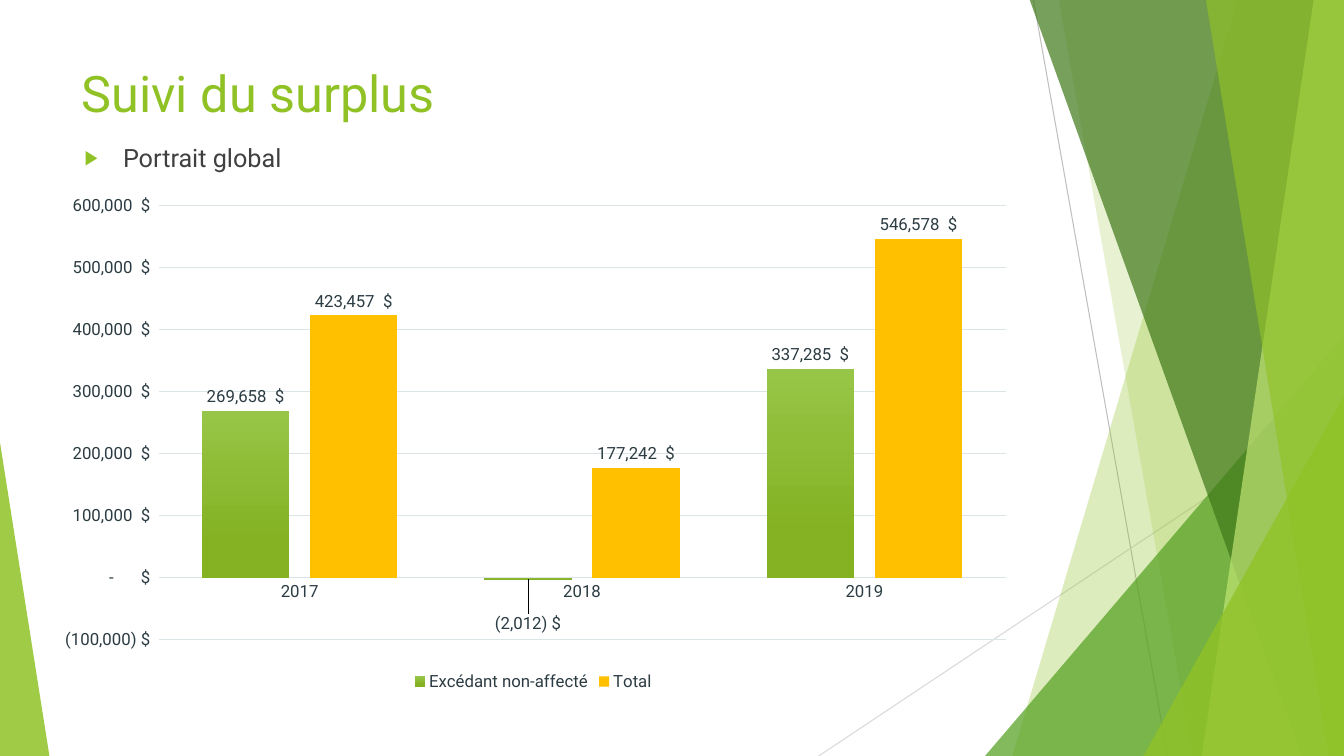
from dataclasses import dataclass

from lxml.etree import Element, SubElement
from pptx import Presentation
from pptx.chart.data import CategoryChartData
from pptx.dml.color import RGBColor as RGB
from pptx.enum.chart import XL_CHART_TYPE as ChartType
from pptx.enum.chart import XL_LABEL_POSITION as LabelPos
from pptx.enum.chart import XL_LEGEND_POSITION as LegendPos
from pptx.enum.chart import XL_TICK_MARK as TickMark
from pptx.enum.shapes import MSO_CONNECTOR as Connector
from pptx.enum.shapes import MSO_SHAPE as Shape
from pptx.enum.text import MSO_ANCHOR as Anchor
from pptx.enum.text import MSO_AUTO_SIZE as AutoSize
from pptx.enum.text import PP_ALIGN as Align
from pptx.oxml.ns import qn
from pptx.util import Inches, Pt


@dataclass(frozen=True)
class Theme:
    font: str = "Roboto"
    green: str = "90C226"
    leaf: str = "54A021"
    forest: str = "3F7819"
    lime: str = "C0E474"
    gold: str = "FFC000"
    bar_light: str = "97C547"
    bar_dark: str = "84B223"
    body: str = "404040"
    label: str = "2C3C43"
    grid: str = "DBE4E7"
    ray: str = "BFBFBF"
    pale_ray: str = "D9D9D9"
    title_size: int = 36
    body_size: int = 18
    label_size: int = 12
    hairline: float = 0.75


def assign(target, values):
    for name, value in values.items():
        setattr(target, name, value)


def box(left, top, width, height):
    return {"left": Inches(left), "top": Inches(top),
            "width": Inches(width), "height": Inches(height)}


class SlideBuilder:
    def __init__(self, slide, theme):
        self.slide = slide
        self.shapes = slide.shapes
        self.theme = theme

    def style_font(self, font, size, color):
        assign(font, {"name": self.theme.font, "size": Pt(size), "bold": False})
        font.color.rgb = RGB.from_string(color)

    def style_line(self, line, color):
        line.color.rgb = RGB.from_string(color)
        line.width = Pt(self.theme.hairline)

    def ray(self, start, end, color):
        ray = self.shapes.add_connector(Connector.STRAIGHT, *map(Inches, start + end))
        self.style_line(ray.line, color)
        SubElement(ray.element.spPr, qn("a:effectLst"))

    def tint(self, facet, color, opacity):
        facet.shadow.inherit = False
        facet.fill.solid()
        facet.fill.fore_color.rgb = RGB.from_string(color)
        facet.line.fill.background()
        solid = facet.element.spPr.find(qn("a:solidFill"))
        SubElement(solid[0], qn("a:alpha"), val=str(opacity * 1000))

    def band(self, top_left, bottom_left, color, opacity):
        top, right, bottom = -0.01, 13.33, 7.5
        outline = self.shapes.build_freeform(Inches(top_left), Inches(top))
        corners = [(right, top), (right, bottom), (bottom_left, bottom)]
        outline.add_line_segments([(Inches(x), Inches(y)) for x, y in corners])
        self.tint(outline.convert_to_shape(), color, opacity)

    def triangle(self, frame, apex, color, opacity):
        triangle = self.shapes.add_shape(Shape.ISOSCELES_TRIANGLE, *map(Inches, frame))
        triangle.adjustments[0] = apex
        self.tint(triangle, color, opacity)

    def placeholder_text(self, holder, text, frame, size, color):
        holder.element.getparent().append(holder.element)
        assign(holder, box(*frame))
        assign(holder.text_frame, {"text": text, "word_wrap": True,
                                   "vertical_anchor": Anchor.TOP,
                                   "auto_size": AutoSize.NONE})
        paragraph = holder.text_frame.paragraphs[0]
        self.style_font(paragraph.runs[0].font, size, color)
        return paragraph

    def title(self, text, frame):
        heading = self.placeholder_text(self.shapes.title, text, frame,
                                        self.theme.title_size, self.theme.green)
        heading.alignment = Align.LEFT

    def bullet(self, text, frame):
        item = self.placeholder_text(self.slide.placeholders[1], text, frame,
                                     self.theme.body_size, self.theme.body)
        item.space_before = Pt(10)
        props = item._p.get_or_add_pPr()
        indent = Inches(0.38)
        props.set("marL", str(indent))
        props.set("indent", str(-indent))
        SubElement(SubElement(props, qn("a:buClr")), qn("a:srgbClr"), val=self.theme.green)
        SubElement(props, qn("a:buSzPct"), val="80000")
        SubElement(props, qn("a:buFont"), typeface="Arial")
        SubElement(props, qn("a:buChar"), char="▶")

    def lower_label(self, series, index, drop):
        label = series.points[index].data_label
        self.style_font(label.font, self.theme.label_size, self.theme.label)
        label.position = LabelPos.OUTSIDE_END
        layout = Element(qn("c:layout"))
        manual = SubElement(layout, qn("c:manualLayout"))
        SubElement(manual, qn("c:x"), val="0")
        SubElement(manual, qn("c:y"), val=str(drop))
        label_xml = series.data_labels._element.find(qn("c:dLbl"))
        label_xml.find(qn("c:idx")).addnext(layout)

    def column_chart(self, years, surplus, number_format, frame):
        theme = self.theme
        data = CategoryChartData(number_format=number_format)
        data.categories = years
        for name, amounts in surplus.items():
            data.add_series(name, amounts)
        chart = self.shapes.add_chart(ChartType.COLUMN_CLUSTERED,
                                      *map(Inches, frame), data).chart
        assign(chart, {"has_title": False, "has_legend": True})
        self.style_font(chart.font, theme.label_size, theme.label)
        assign(chart.legend, {"position": LegendPos.BOTTOM, "include_in_layout": False})
        self.style_font(chart.legend.font, theme.label_size, theme.label)
        for axis in (chart.category_axis, chart.value_axis):
            assign(axis, {"major_tick_mark": TickMark.NONE, "minor_tick_mark": TickMark.NONE})
            self.style_font(axis.tick_labels.font, theme.label_size, theme.label)
        self.style_line(chart.category_axis.format.line, theme.grid)
        amounts_axis = chart.value_axis
        assign(amounts_axis, {"minimum_scale": -100000, "maximum_scale": 600000,
                              "major_unit": 100000, "has_major_gridlines": True})
        amounts_axis.format.line.fill.background()
        self.style_line(amounts_axis.major_gridlines.format.line, theme.grid)
        number_style = {"number_format": number_format, "number_format_is_linked": False}
        assign(amounts_axis.tick_labels, number_style)
        plot = chart.plots[0]
        assign(plot, {"gap_width": 100, "overlap": -24, "vary_by_categories": False})
        for series in plot.series:
            series.invert_if_negative = False
            assign(series.data_labels, {**number_style, "show_value": True,
                                        "position": LabelPos.OUTSIDE_END})
            self.style_font(series.data_labels.font, theme.label_size, theme.label)
            for index, amount in enumerate(series.values):
                if amount < 0:
                    self.lower_label(series, index, 0.06)
        unassigned, total = plot.series
        gradient = unassigned.format.fill
        gradient.gradient()
        gradient.gradient_angle = 270
        stops = ((0, theme.bar_light), (0.78, theme.bar_dark))
        for stop, (position, color) in zip(gradient.gradient_stops, stops):
            stop.position = position
            stop.color.rgb = RGB.from_string(color)
        total.format.fill.solid()
        total.format.fill.fore_color.rgb = RGB.from_string(theme.gold)


def main():
    theme = Theme()
    deck = Presentation()
    assign(deck, {"slide_width": Inches(13.33), "slide_height": Inches(7.5)})
    page = SlideBuilder(deck.slides.add_slide(deck.slide_layouts[1]), theme)

    page.ray((10.25, 0), (11.58, 7.5), theme.ray)
    page.ray((13.33, 4.03), (8.12, 7.5), theme.pale_ray)
    page.band(12.28, 10.04, theme.green, 30)
    page.band(10.5, 11.83, theme.green, 20)
    page.triangle((9.77, 3.33, 3.56, 4.17), 1, theme.leaf, 72)
    page.band(10.21, 12.91, theme.forest, 70)
    page.band(13.03, 11.92, theme.lime, 70)
    page.band(11.96, 13.18, theme.green, 65)
    page.triangle((11.34, 3.93, 1.99, 3.57), 1, theme.green, 80)
    page.triangle((0, 4.39, 0.49, 3.11), 0, theme.green, 85)

    page.title("Suivi du surplus", (0.71, 0.57, 9.4, 1.44))
    page.bullet("Portrait global", (0.74, 1.36, 9.4, 4.24))
    surplus = {"Excédant non-affecté": (269658, -2012, 337285),
               "Total": (423457, 177242, 546578)}
    dollars = r'_ * #,##0_)\ "$"_ ;_ * \(#,##0\)\ "$"_ ;_ * "-"??_)\ "$"_ ;_ @_ '
    page.column_chart(("2017", "2018", "2019"), surplus, dollars, (0.41, 1.84, 9.76, 5.06))
    deck.save("out.pptx")


if __name__ == "__main__":
    main()
